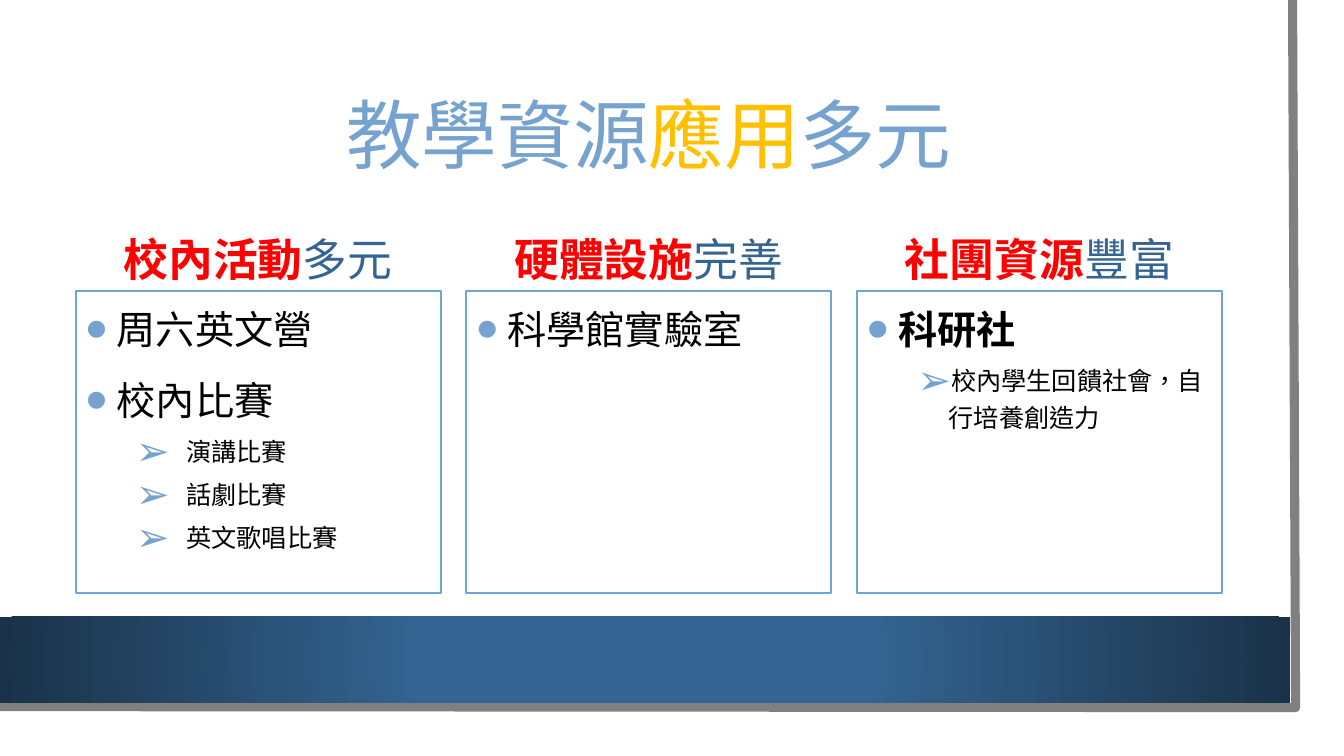
"""Build the slide on diverse teaching resources with three headed columns."""
from lxml import etree
from pptx import Presentation
from pptx.dml.color import RGBColor
from pptx.enum.lang import MSO_LANGUAGE_ID as LANG
from pptx.enum.shapes import MSO_SHAPE as SHAPE
from pptx.enum.text import MSO_ANCHOR as ANCHOR, PP_ALIGN as ALIGN
from pptx.oxml.ns import qn
from pptx.util import Inches, Pt

BLUE = RGBColor(0x75, 0xA2, 0xCE)
BORDER = RGBColor(0x6D, 0xA5, 0xD4)
DEEP = RGBColor(0x34, 0x64, 0x92)
NAVY = RGBColor(0x1A, 0x32, 0x49)
GOLD = RGBColor(0xFF, 0xC0, 0x00)
RED = RGBColor(0xFF, 0x00, 0x00)
GRAY = RGBColor(0x80, 0x80, 0x80)
BLACK = RGBColor(0x00, 0x00, 0x00)
WHITE = RGBColor(0xFF, 0xFF, 0xFF)
TITLE_FONT, BODY_FONT = "Noto Sans CJK SC", "Arial Narrow"

COLUMNS = [
    ("校內活動", "多元", False, 0.5,
     [(0, "周六英文營"), (0, "校內比賽"), (1, "演講比賽"), (1, "話劇比賽"), (1, "英文歌唱比賽")]),
    ("硬體設施", "完善", False, 0.5, [(0, "科學館實驗室")]),
    ("社團資源", "豐富", True, 0.31,
     [(0, "科研社"), (1, "校內學生回饋社會，自行培養創造力")]),
]


def add_run(p, text, name, size, color, bold=False):
    r = p.add_run()
    r.text = text
    r.font.name, r.font.size, r.font.bold = name, Pt(size), bold
    r.font.color.rgb = color
    r.font.language_id = LANG.TRADITIONAL_CHINESE
    return r


def add_bullet(p, char, left, hang):
    pPr = p._p.get_or_add_pPr()
    pPr.set("marL", str(Inches(left)))
    pPr.set("indent", str(-Inches(hang)))
    color = etree.SubElement(pPr, qn("a:buClr"))
    etree.SubElement(color, qn("a:srgbClr"), val=str(BLUE))
    etree.SubElement(pPr, qn("a:buSzPct"), val="160000")
    etree.SubElement(pPr, qn("a:buFont"), typeface="Arial")
    etree.SubElement(pPr, qn("a:buChar"), char=char)


prs = Presentation()
prs.slide_width, prs.slide_height = Inches(13.33), Inches(7.5)
s = prs.slides.add_slide(prs.slide_layouts[5])

builder = s.shapes.build_freeform(Inches(12.82), 0)
builder.add_line_segments(
    [(Inches(12.85), Inches(7.02)), (Inches(-0.03), Inches(7.01))], close=False)
edge = builder.convert_to_shape()
edge.shadow.inherit = False
edge.fill.background()
edge.line.color.rgb = GRAY
edge.line.width = Pt(6.5)

band = s.shapes.add_shape(SHAPE.RECTANGLE, 0, Inches(6.12), Inches(12.8), Inches(0.85))
band.shadow.inherit = False
band.line.fill.background()
band.fill.gradient()
for stop, position, color in zip(band.fill.gradient_stops, (0.34, 1), (DEEP, NAVY)):
    stop.position = position
    stop.color.rgb = color
grad = band._element.spPr.find(qn("a:gradFill"))
grad.remove(grad.find(qn("a:lin")))
circle = etree.SubElement(grad, qn("a:path"), path="circle")
etree.SubElement(circle, qn("a:fillToRect"), l="50000", t="50000", r="50000", b="50000")

title = s.shapes.title
title.left, title.top = Inches(0.75), Inches(0.75)
title.width, title.height = Inches(11.37), Inches(1.26)
title.text_frame.vertical_anchor = ANCHOR.MIDDLE
p = title.text_frame.paragraphs[0]
p.alignment = ALIGN.CENTER
p.line_spacing = 0.9
for text, color in (("教學資源", BLUE), ("應用", GOLD), ("多元", BLUE)):
    r = add_run(p, text, TITLE_FONT, 54, color)
    etree.SubElement(r.font._element, qn("a:ea"), typeface=TITLE_FONT)

for i, (strong, rest, bold, hang, items) in enumerate(COLUMNS):
    left = Inches(0.75 + 3.875 * i)
    heading = s.shapes.add_textbox(left, Inches(2.26), Inches(3.62), Inches(0.63))
    tf = heading.text_frame
    tf.word_wrap = True
    tf.vertical_anchor = ANCHOR.BOTTOM
    p = tf.paragraphs[0]
    p.alignment = ALIGN.CENTER
    p.line_spacing = 0.9
    add_run(p, strong, BODY_FONT, 32, RED, True)
    add_run(p, rest, BODY_FONT, 32, DEEP)

    box = s.shapes.add_shape(SHAPE.RECTANGLE, left, Inches(2.89), Inches(3.62), Inches(2.99))
    box.shadow.inherit = False
    box.fill.solid()
    box.fill.fore_color.rgb = WHITE
    box.line.color.rgb = BORDER
    box.line.width = Pt(1.5)
    tf = box.text_frame
    tf.word_wrap = True
    tf.vertical_anchor = ANCHOR.TOP
    for n, (level, text) in enumerate(items):
        p = tf.add_paragraph() if n else tf.paragraphs[0]
        p.level = level
        p.alignment = ALIGN.LEFT
        p.line_spacing = 1.2
        if n:
            p.space_before = Pt(5 if level else 10)
        if level:
            add_bullet(p, "➢", 0.5 + hang, hang)
        else:
            add_bullet(p, "•", 0.31, 0.31)
        add_run(p, text, BODY_FONT, 18 if level else 28, BLACK, bold and not level)

prs.save("out.pptx")
